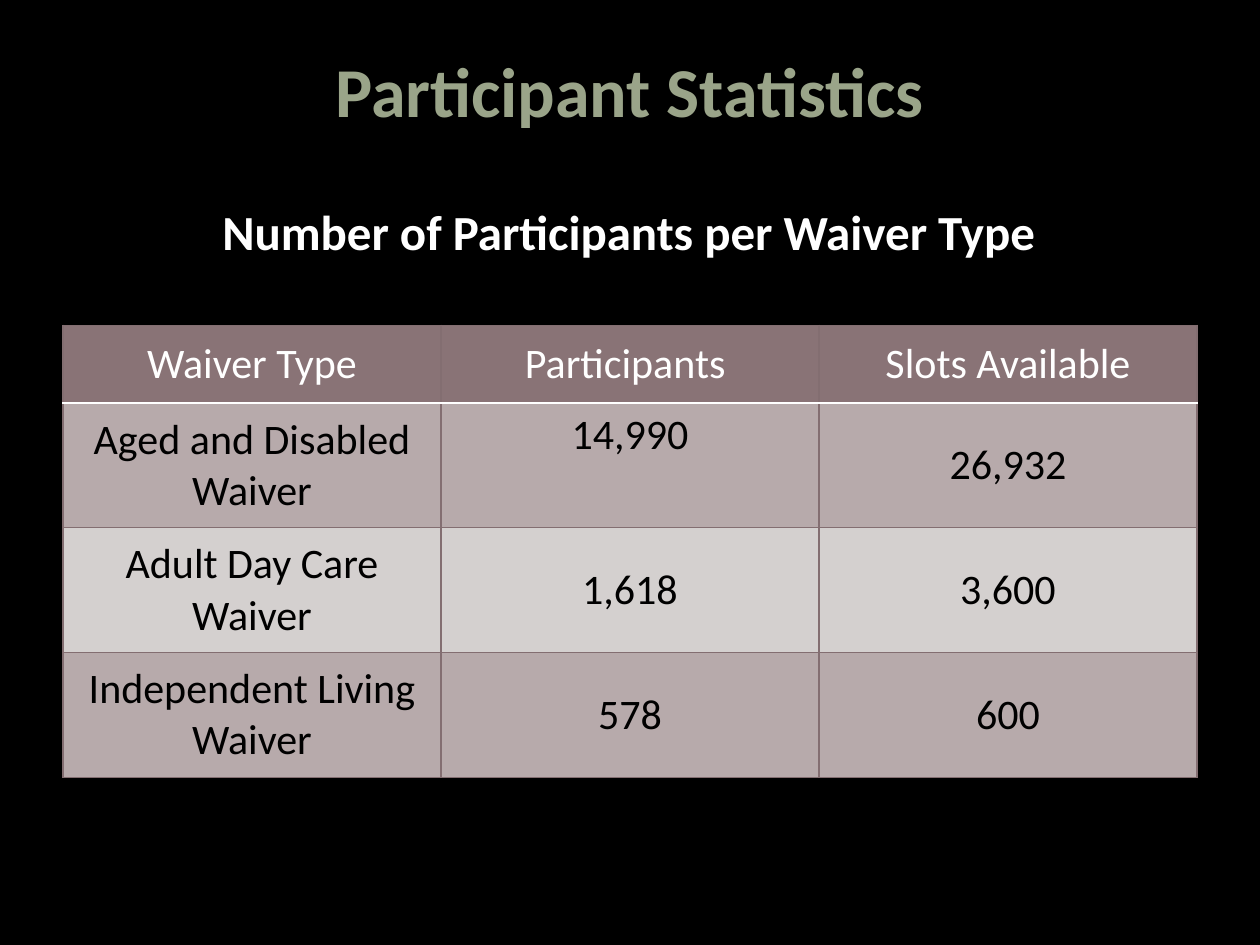
from dataclasses import dataclass

from lxml import etree
from pptx import Presentation
from pptx.dml.color import RGBColor
from pptx.enum.text import MSO_ANCHOR, PP_ALIGN
from pptx.oxml.ns import qn
from pptx.util import Inches, Pt

LEFT, CENTER = PP_ALIGN.LEFT, PP_ALIGN.CENTER
TOP, MIDDLE = MSO_ANCHOR.TOP, MSO_ANCHOR.MIDDLE

W, H = 10, 7.5
FONT = "Calibri"
COLORS = {
    "background": "000000",
    "title": "9AA489",
    "light": "FFFFFF",
    "dark": "000000",
    "header": "897376",
    "odd": "B7AAAB",
    "even": "D4D0CF",
    "border": "836E71",
}


@dataclass
class Row:
    cells: tuple
    height: float
    fill: str
    color: str = "dark"
    anchors: tuple = (MIDDLE, MIDDLE, MIDDLE)


HEADER_H, BODY_H = 0.62, 0.99
ROWS = [
    Row(("Waiver Type", "Participants ", "Slots Available"), HEADER_H, "header", "light"),
    Row(("Aged and Disabled Waiver", "14,990", "26,932"), BODY_H, "odd",
        anchors=(MIDDLE, TOP, MIDDLE)),
    Row(("Adult Day Care Waiver", "1,618", "3,600"), BODY_H, "even"),
    Row(("Independent Living Waiver", "578", "600"), BODY_H, "odd"),
]


def rgb(name: str) -> RGBColor:
    return RGBColor.from_string(COLORS[name])


def write(tf, text: str, *, size: float, color: str, bold: bool = False,
          align=CENTER) -> None:
    tf.word_wrap = True
    p = tf.paragraphs[0]
    p.alignment = align
    r = p.add_run()
    r.text = text
    r.font.name, r.font.size, r.font.bold = FONT, Pt(size), bold
    r.font.color.rgb = rgb(color)


def add_text(s, text: str, x: float, y: float, w: float, h: float,
             anchor=TOP, **style) -> None:
    box = s.shapes.add_textbox(Inches(x), Inches(y), Inches(w), Inches(h))
    box.text_frame.vertical_anchor = anchor
    write(box.text_frame, text, **style)


def set_border(cell, side: str, color: str, width: float) -> None:
    ln = etree.Element(qn(f"a:{side}"), w=str(Pt(width)))
    fill = etree.SubElement(ln, qn("a:solidFill"))
    etree.SubElement(fill, qn("a:srgbClr"), val=COLORS[color])
    cell._tc.get_or_add_tcPr().append(ln)


def add_table(s, rows: list[Row], x: float, y: float, w: float) -> None:
    n_cols = len(rows[0].cells)
    total = sum(row.height for row in rows)
    table = s.shapes.add_table(len(rows), n_cols, Inches(x), Inches(y),
                               Inches(w), Inches(total)).table
    for col in table.columns:
        col.width = Inches(w / n_cols)
    for i, row in enumerate(rows):
        table.rows[i].height = Inches(row.height)
        for j, text in enumerate(row.cells):
            cell = table.cell(i, j)
            cell.vertical_anchor = row.anchors[j]
            write(cell.text_frame, text, size=24, color=row.color)
            # Borders come before the fill in the cell properties
            for side in ("lnL", "lnR", "lnT", "lnB"):
                below_header = (i, side) in ((0, "lnB"), (1, "lnT"))
                set_border(cell, side, *(("light", 1.25) if below_header
                                         else ("border", 0.75)))
            cell.fill.solid()
            cell.fill.fore_color.rgb = rgb(row.fill)


def main() -> None:
    prs = Presentation()
    prs.slide_width, prs.slide_height = Inches(W), Inches(H)
    s = prs.slides.add_slide(prs.slide_layouts[6])
    s.background.fill.solid()
    s.background.fill.fore_color.rgb = rgb("background")

    # Headings
    add_text(s, "Participant Statistics", 0.08, 0.17, 9.83, 1.08, MIDDLE,
             size=40, color="title", bold=True)
    add_text(s, "Number of Participants per Waiver Type", W / 6, 1.55, 0.7 * W, 0.57,
             size=28, color="light", bold=True, align=LEFT)

    # Waiver table
    add_table(s, ROWS, 0.05 * W, 2.58, 0.9 * W)

    prs.save("out.pptx")


if __name__ == "__main__":
    main()
